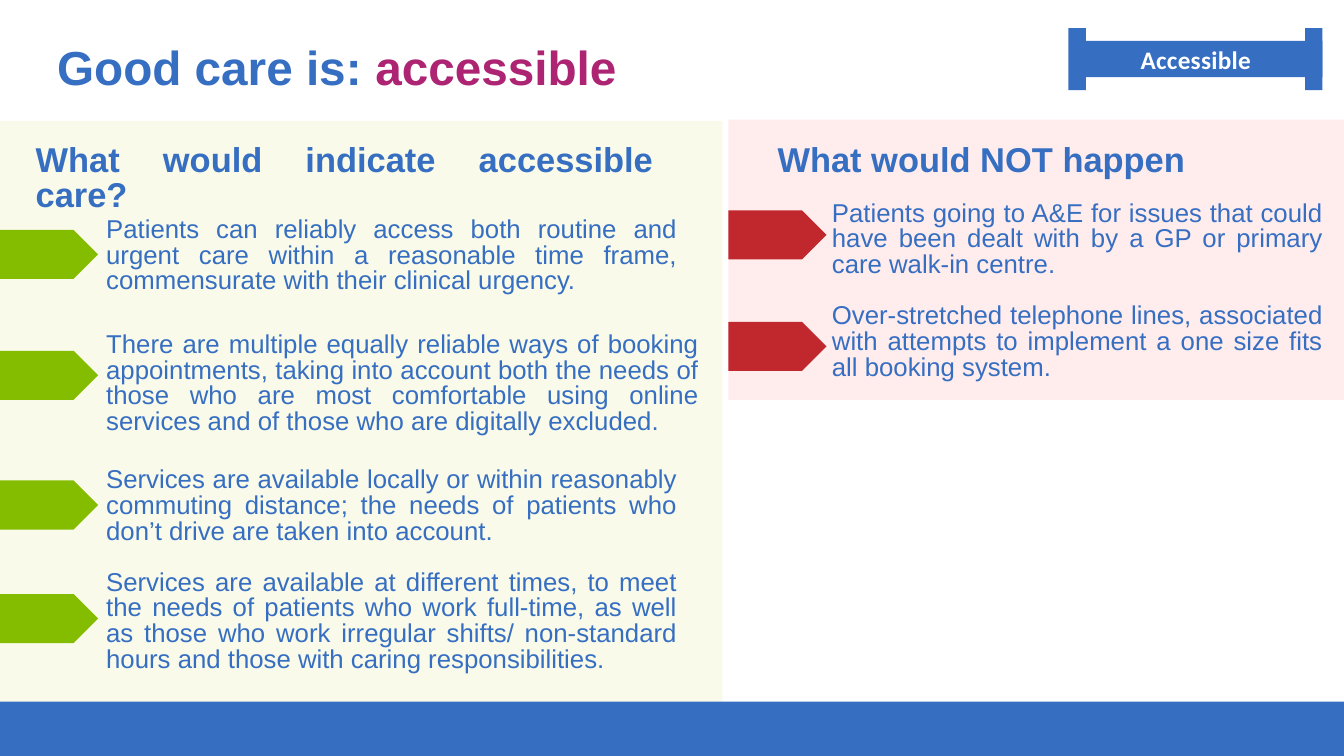
from dataclasses import dataclass

from lxml import etree
from pptx import Presentation
from pptx.dml.color import RGBColor
from pptx.enum.shapes import MSO_SHAPE
from pptx.enum.text import MSO_ANCHOR, MSO_AUTO_SIZE, PP_ALIGN
from pptx.oxml.ns import qn
from pptx.util import Pt

RECT, ARROW = MSO_SHAPE.RECTANGLE, MSO_SHAPE.PENTAGON
TOP, NO_FIT = MSO_ANCHOR.TOP, MSO_AUTO_SIZE.NONE
JUSTIFY, CENTER = PP_ALIGN.JUSTIFY, PP_ALIGN.CENTER
PX = 9144  # 100 px to the inch
COMPARISON = 4


@dataclass(frozen=True)
class Theme:
    blue: str = "366EC2"
    magenta: str = "AD2473"
    green: str = "84BD00"
    red: str = "C1282D"
    lime: str = "C6D428"
    rose: str = "FF1616"
    white: str = "FFFFFF"
    font: str = "Arial"
    badge_font: str = "Calibri"
    title: float = 51.1
    heading: float = 36.9
    body: float = 27.6
    badge: float = 27


T = Theme()

prs = Presentation()
prs.slide_width, prs.slide_height = 2000 * PX, 1125 * PX
s = prs.slides.add_slide(prs.slide_layouts[COMPARISON])
title, left_head, left_body, right_head, right_body = s.placeholders
for unused in (left_body, right_body):
    unused._element.getparent().remove(unused._element)


def add_block(kind, box, color, opacity=100):
    """Add a plain filled shape; box is left, top, width, height in px."""
    sp = s.shapes.add_shape(kind, *(v * PX for v in box))
    sp.shadow.inherit = False
    sp.fill.solid()
    sp.fill.fore_color.rgb = RGBColor.from_string(color)
    sp.line.fill.background()
    if opacity < 100:
        clr = sp._element.spPr.find(".//" + qn("a:srgbClr"))
        etree.SubElement(clr, qn("a:alpha")).set("val", str(opacity * 1000))


def write(sp, box, runs, size, bold=False, font=T.font, align=JUSTIFY, spacing=None):
    """Place a text shape on top and fill it with (text, color) runs."""
    s.shapes._spTree.append(sp._element)
    sp.left, sp.top, sp.width, sp.height = (v * PX for v in box)
    tf = sp.text_frame
    tf.word_wrap, tf.auto_size, tf.vertical_anchor = True, NO_FIT, TOP
    tf.margin_left = tf.margin_top = tf.margin_right = tf.margin_bottom = 0
    p = tf.paragraphs[0]
    p.alignment, p.space_before = align, Pt(0)
    p.line_spacing = Pt(spacing or size)
    for text, color in runs:
        r = p.add_run()
        r.text = text
        r.font.name, r.font.size, r.font.bold = font, Pt(size), bold
        r.font.color.rgb = RGBColor.from_string(color)
    return p


# Panels and footer band
add_block(RECT, (1084, 178, 916, 417), T.rose, 8)
add_block(RECT, (0, 180, 1075, 864), T.lime, 10)
add_block(RECT, (0, 1044, 2000, 81), T.blue)

# Title and column headings
write(title, (85, 70, 1400, 85),
      [("Good care is: ", T.blue), ("accessible", T.magenta)], T.title, True)
write(left_head, (53, 216, 920, 61),
      [("What would indicate accessible care?", T.blue)], T.heading, True)
write(right_head, (1157, 216, 621, 61),
      [("What would NOT happen", T.blue)], T.heading, True)

# Columns: arrow left, arrow color, text left, then
# (arrow top, text top, text width, text height, text) per item
columns = [
    (0, T.green, 158, [
        (342, 324, 849, 123,
         "Patients can reliably access both routine and urgent care within a "
         "reasonable time frame, commensurate with their clinical urgency."),
        (522, 495, 881, 161,
         "There are multiple equally reliable ways of booking appointments, "
         "taking into account both the needs of those who are most comfortable "
         "using online services and of those who are digitally excluded."),
        (715, 697, 849, 123,
         "Services are available locally or within reasonably commuting "
         "distance; the needs of patients who don’t drive are taken into account."),
        (884, 849, 849, 161,
         "Services are available at different times, to meet the needs of "
         "patients who work full-time, as well as those who work irregular "
         "shifts/ non-standard hours and those with caring responsibilities."),
    ]),
    (1084, T.red, 1238, [
        (313, 300, 730, 123,
         "Patients going to A&E for issues that could have been dealt with by "
         "a GP or primary care walk-in centre."),
        (479, 453, 730, 123,
         "Over-stretched telephone lines, associated with attempts to "
         "implement a one size fits all booking system."),
    ]),
]
for arrow_x, color, text_x, items in columns:
    for arrow_y, text_y, w, h, text in items:
        add_block(ARROW, (arrow_x, arrow_y, 146, 73), color)
        write(s.shapes.add_textbox(0, 0, 0, 0), (text_x, text_y, w, h),
              [(text, T.blue)], T.body)

# Badge: a bar between two end caps
add_block(RECT, (1603, 61, 365, 54), T.blue)
for cap_x in (1590, 1942):
    add_block(RECT, (cap_x, 42, 26, 92), T.blue)
p = write(s.shapes.add_textbox(0, 0, 0, 0), (1617, 58, 325, 53),
          [("Accessible", T.white)], T.badge, True, T.badge_font, CENTER, 37.8)
p.runs[0].font._element.set("spc", "30")

prs.save("out.pptx")
